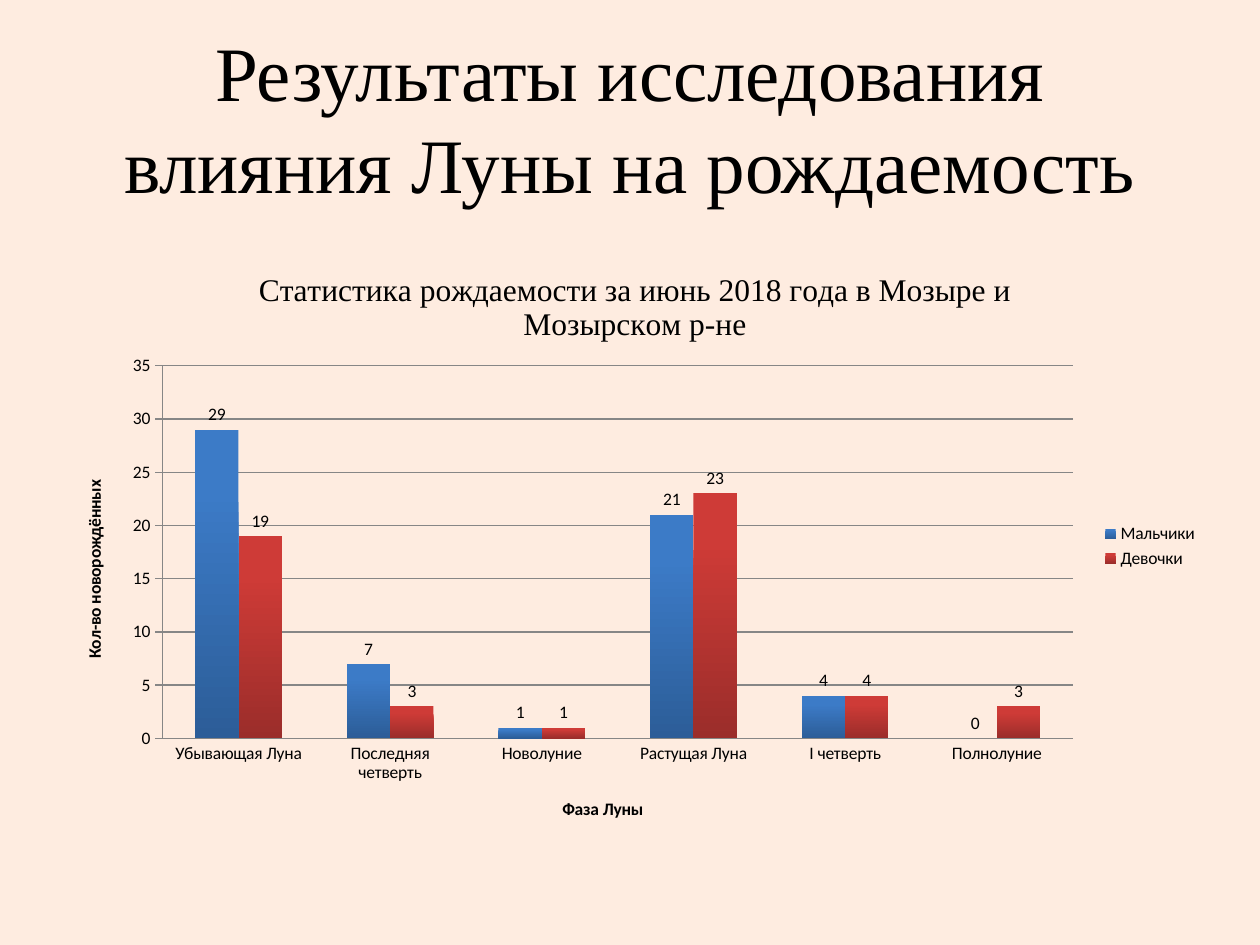
import pptx
import pptx.chart.data
import pptx.dml.color
import pptx.enum.chart
import pptx.enum.text
import pptx.oxml
import pptx.oxml.ns
import pptx.util
from pptx.util import Cm

BLACK = "000000"
GREY = "868686"
PHASES = ["Убывающая Луна", "Последняя четверть", "Новолуние",
          "Растущая Луна", "I четверть", "Полнолуние"]
# name, values, top and bottom colour of the bars
SERIES = [
    ("Мальчики", (29, 7, 1, 21, 4, 0), "3C7BC7", "2C5D98"),
    ("Девочки", (19, 3, 1, 23, 4, 3), "CE3B37", "9B2D2A"),
]


def rgb(value):
    return pptx.dml.color.RGBColor.from_string(value)


def format_font(font, size=10, name="Calibri", color=BLACK, bold=False):
    font.size = pptx.util.Pt(size)
    font.name = name
    font.bold = bold
    font.color.rgb = rgb(color)


def write_text(tf, text, **fmt):
    p = tf.paragraphs[0]
    p.alignment = pptx.enum.text.PP_ALIGN.CENTER
    r = p.add_run()
    r.text = text
    format_font(r.font, **fmt)


def add_title(s, text):
    sp = s.shapes.title
    sp.left, sp.top, sp.width, sp.height = Cm(1.27), Cm(0.76), Cm(22.86), Cm(3.18)
    tf = sp.text_frame
    tf.word_wrap = True
    tf.auto_size = pptx.enum.text.MSO_AUTO_SIZE.NONE
    tf.vertical_anchor = pptx.enum.text.MSO_ANCHOR.MIDDLE
    write_text(tf, text, size=44, name="Times New Roman")


def place_plot(chart, **fractions):
    """Fix the inner plot area as fractions of the chart frame."""
    ns = pptx.oxml.ns.nsdecls("c")
    sizes = "".join(f'<c:{key} val="{val}"/>' for key, val in fractions.items())
    layout = pptx.oxml.parse_xml(
        f'<c:layout {ns}><c:manualLayout><c:layoutTarget val="inner"/>'
        f'<c:xMode val="edge"/><c:yMode val="edge"/>{sizes}'
        '</c:manualLayout></c:layout>')
    area = chart.element.find(".//" + pptx.oxml.ns.qn("c:plotArea"))
    for old in area.findall(pptx.oxml.ns.qn("c:layout")):
        area.remove(old)
    area.insert(0, layout)


def format_axis(axis, title, tick):
    write_text(axis.axis_title.text_frame, title, bold=True)
    axis.major_tick_mark = tick
    axis.minor_tick_mark = pptx.enum.chart.XL_TICK_MARK.NONE
    format_font(axis.tick_labels.font)
    axis.format.line.color.rgb = rgb(GREY)
    axis.format.line.width = pptx.util.Pt(0.75)


def format_series(series, top, bottom):
    fill = series.format.fill
    fill.gradient()
    fill.gradient_angle = 270
    for stop, position, color in zip(fill.gradient_stops, (0.2, 1), (top, bottom)):
        stop.position = position
        stop.color.rgb = rgb(color)
    series.invert_if_negative = False
    labels = series.data_labels
    labels.show_value = True
    labels.position = pptx.enum.chart.XL_LABEL_POSITION.OUTSIDE_END
    format_font(labels.font)


def add_birth_chart(s):
    data = pptx.chart.data.CategoryChartData()
    data.categories = PHASES
    for name, values, *_ in SERIES:
        data.add_series(name, values)
    chart = s.shapes.add_chart(
        pptx.enum.chart.XL_CHART_TYPE.COLUMN_CLUSTERED,
        Cm(1.19), Cm(4.95), Cm(23.22), Cm(12.12), data).chart
    format_font(chart.font)

    chart.has_title = True
    write_text(chart.chart_title.text_frame,
               "Статистика рождаемости за июнь 2018 года в Мозыре и Мозырском р-не",
               size=18, name="Times New Roman")
    chart.has_legend = True
    chart.legend.position = pptx.enum.chart.XL_LEGEND_POSITION.RIGHT
    chart.legend.include_in_layout = False
    format_font(chart.legend.font)

    ticks = pptx.enum.chart.XL_TICK_MARK
    format_axis(chart.category_axis, "Фаза Луны", ticks.NONE)
    axis = chart.value_axis
    format_axis(axis, "Кол-во новорождённых", ticks.CROSS)
    axis.minimum_scale, axis.maximum_scale, axis.major_unit = 0, 35, 5
    axis.has_major_gridlines = True
    axis.major_gridlines.format.line.color.rgb = rgb(GREY)
    axis.major_gridlines.format.line.width = pptx.util.Pt(0.75)

    plot = chart.plots[0]
    plot.gap_width = 150
    plot.overlap = 0
    plot.vary_by_categories = False
    for series, (_, _, top, bottom) in zip(plot.series, SERIES):
        format_series(series, top, bottom)
    place_plot(chart, x=0.09, y=0.2, w=0.79, h=0.62)


def main():
    prs = pptx.Presentation()
    prs.slide_width, prs.slide_height = Cm(25.4), Cm(19.05)
    s = prs.slides.add_slide(prs.slide_layouts[5])
    s.background.fill.solid()
    s.background.fill.fore_color.rgb = rgb("FEECE0")
    add_title(s, "Результаты исследования влияния Луны на рождаемость")
    add_birth_chart(s)
    prs.save("out.pptx")


if __name__ == "__main__":
    main()
